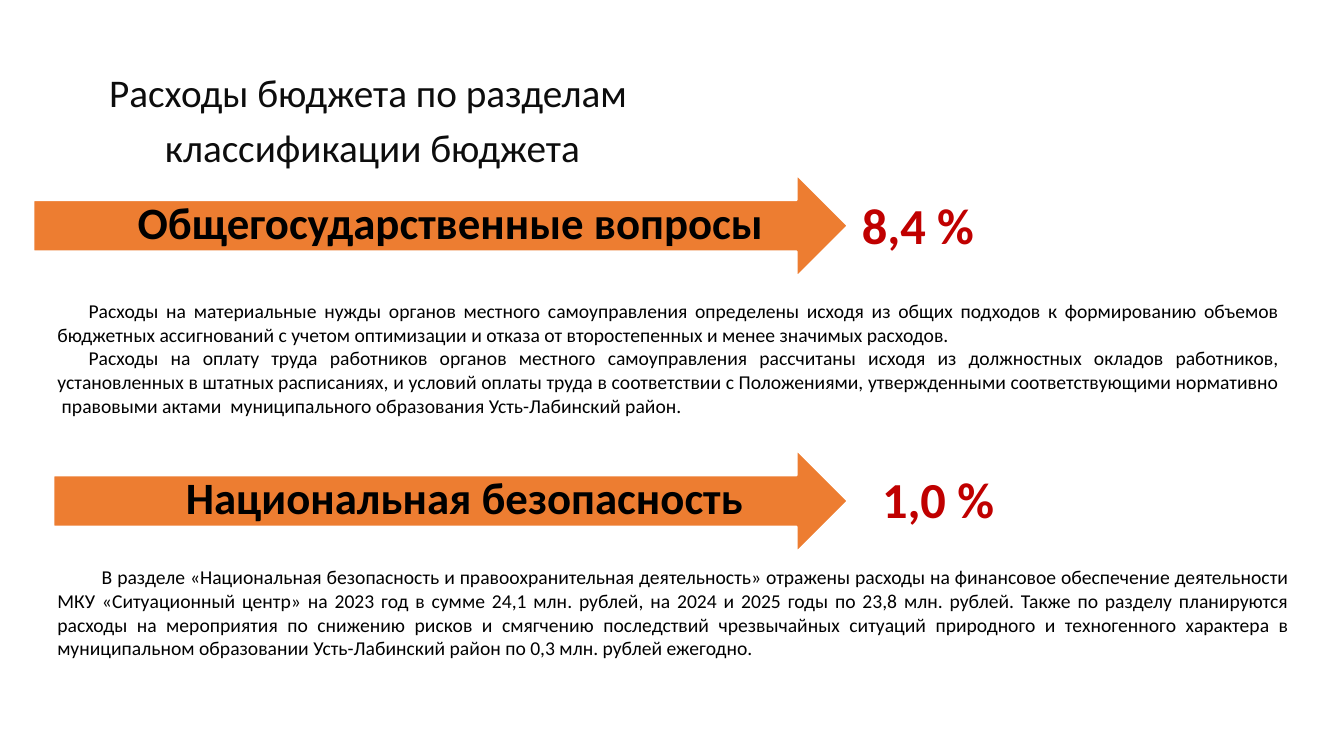
from dataclasses import dataclass
from typing import Optional

from pptx import Presentation
from pptx.dml.color import RGBColor
from pptx.enum.shapes import MSO_SHAPE
from pptx.enum.text import MSO_ANCHOR, MSO_AUTO_SIZE, PP_ALIGN
from pptx.util import Emu, Pt

PX = 9144


@dataclass(frozen=True)
class Theme:
    font: str = "Calibri"
    title_color: str = "0D0D0D"
    text_color: str = "000000"
    share_color: str = "C00000"
    arrow_fill: str = "ED7D31"
    arrow_line: str = "FFFFFF"
    arrow_line_width: float = 1.5
    title_size: int = 28
    heading_size: int = 32
    share_size: int = 36
    body_size: int = 14


@dataclass(frozen=True)
class Box:
    left: int
    top: int
    width: int
    height: int

    def emu(self) -> tuple[Emu, ...]:
        return tuple(px(n) for n in (self.left, self.top, self.width, self.height))


@dataclass(frozen=True)
class Section:
    heading: str
    share: str
    body: list[str]
    arrow: Box
    label: Box
    label_inset: int
    share_box: Box
    body_box: Box
    indent: int


THEME = Theme()
TITLE = ["Расходы бюджета по разделам", " классификации бюджета"]
TITLE_BOX = Box(12, 63, 706, 45)
SECTIONS = [
    Section(
        "Общегосударственные вопросы", "8,4 %",
        ["Расходы на материальные нужды органов местного самоуправления определены "
         "исходя из общих подходов к формированию объемов бюджетных ассигнований "
         "с учетом оптимизации и отказа от второстепенных и менее значимых расходов.",
         "Расходы на оплату труда работников органов местного самоуправления рассчитаны "
         "исходя из должностных окладов работников, установленных в штатных расписаниях, "
         "и условий оплаты труда в соответствии с Положениями, утвержденными "
         "соответствующими нормативно  правовыми актами  муниципального образования "
         "Усть-Лабинский район."],
        Box(33, 173, 808, 102), Box(98, 198, 718, 51), 20,
        Box(845, 188, 133, 71), Box(47, 292, 1232, 128), 31),
    Section(
        "Национальная безопасность", "1,0 %",
        ["В разделе «Национальная безопасность и правоохранительная деятельность» "
         "отражены расходы на финансовое обеспечение деятельности МКУ «Ситуационный "
         "центр» на 2023 год в сумме 24,1 млн. рублей, на 2024 и 2025 годы по 23,8 млн. "
         "рублей. Также по разделу планируются расходы на мероприятия по снижению рисков "
         "и смягчению последствий чрезвычайных ситуаций природного и техногенного "
         "характера в муниципальном образовании Усть-Лабинский район по 0,3 млн. рублей "
         "ежегодно."],
        Box(53, 446, 788, 102), Box(116, 471, 700, 51), 10,
        Box(865, 459, 133, 71), Box(47, 556, 1242, 104), 44),
]


def px(n: int) -> Emu:
    return Emu(n * PX)


def write(tf, lines: list[str], *, size: int, color: str, bold: bool = False,
          align: PP_ALIGN = PP_ALIGN.LEFT, anchor: MSO_ANCHOR = MSO_ANCHOR.TOP,
          wrap: bool = True, indent: int = 0, gap: float = 0, spacing: float = 1.0,
          insets: Optional[tuple[int, int, int, int]] = None) -> None:
    tf.auto_size = MSO_AUTO_SIZE.NONE
    tf.word_wrap = wrap
    tf.vertical_anchor = anchor
    if insets is not None:
        (tf.margin_left, tf.margin_top,
         tf.margin_right, tf.margin_bottom) = (px(n) for n in insets)
    for i, line in enumerate(lines):
        p = tf.add_paragraph() if i else tf.paragraphs[0]
        p.alignment = align
        p.line_spacing = spacing
        p.space_before = Pt(gap if i else 0)
        if indent:
            p._p.get_or_add_pPr().set("indent", str(px(indent)))
        r = p.add_run()
        r.text = line
        r.font.name = THEME.font
        r.font.size = Pt(size)
        r.font.bold = bold
        r.font.color.rgb = RGBColor.from_string(color)


def add_text(shapes, box: Box, lines: list[str], **fmt) -> None:
    write(shapes.add_textbox(*box.emu()).text_frame, lines, **fmt)


def add_arrow(shapes, box: Box) -> None:
    sp = shapes.add_shape(MSO_SHAPE.RIGHT_ARROW, *box.emu())
    sp.shadow.inherit = False
    sp.fill.solid()
    sp.fill.fore_color.rgb = RGBColor.from_string(THEME.arrow_fill)
    sp.line.color.rgb = RGBColor.from_string(THEME.arrow_line)
    sp.line.width = Pt(THEME.arrow_line_width)


def add_section(s, section: Section) -> None:
    group = s.shapes.add_group_shape().shapes
    add_arrow(group, section.arrow)
    add_text(group, section.label, [section.heading], size=THEME.heading_size,
             color=THEME.text_color, bold=True, align=PP_ALIGN.CENTER,
             anchor=MSO_ANCHOR.MIDDLE, spacing=0.9,
             insets=(0, 0, section.label_inset, 0))
    add_text(s.shapes, section.share_box, [section.share], size=THEME.share_size,
             color=THEME.share_color, bold=True, wrap=False)
    add_text(s.shapes, section.body_box, section.body, size=THEME.body_size,
             color=THEME.text_color, align=PP_ALIGN.JUSTIFY, indent=section.indent)


def main() -> None:
    prs = Presentation()
    prs.slide_width, prs.slide_height = px(1333), px(750)
    s = prs.slides.add_slide(prs.slide_layouts[5])
    title = s.shapes.title
    title.left, title.top, title.width, title.height = TITLE_BOX.emu()
    write(title.text_frame, TITLE, size=THEME.title_size, color=THEME.title_color,
          align=PP_ALIGN.CENTER, gap=0.2 * THEME.title_size)
    for section in SECTIONS:
        add_section(s, section)
    prs.save("out.pptx")


if __name__ == "__main__":
    main()
